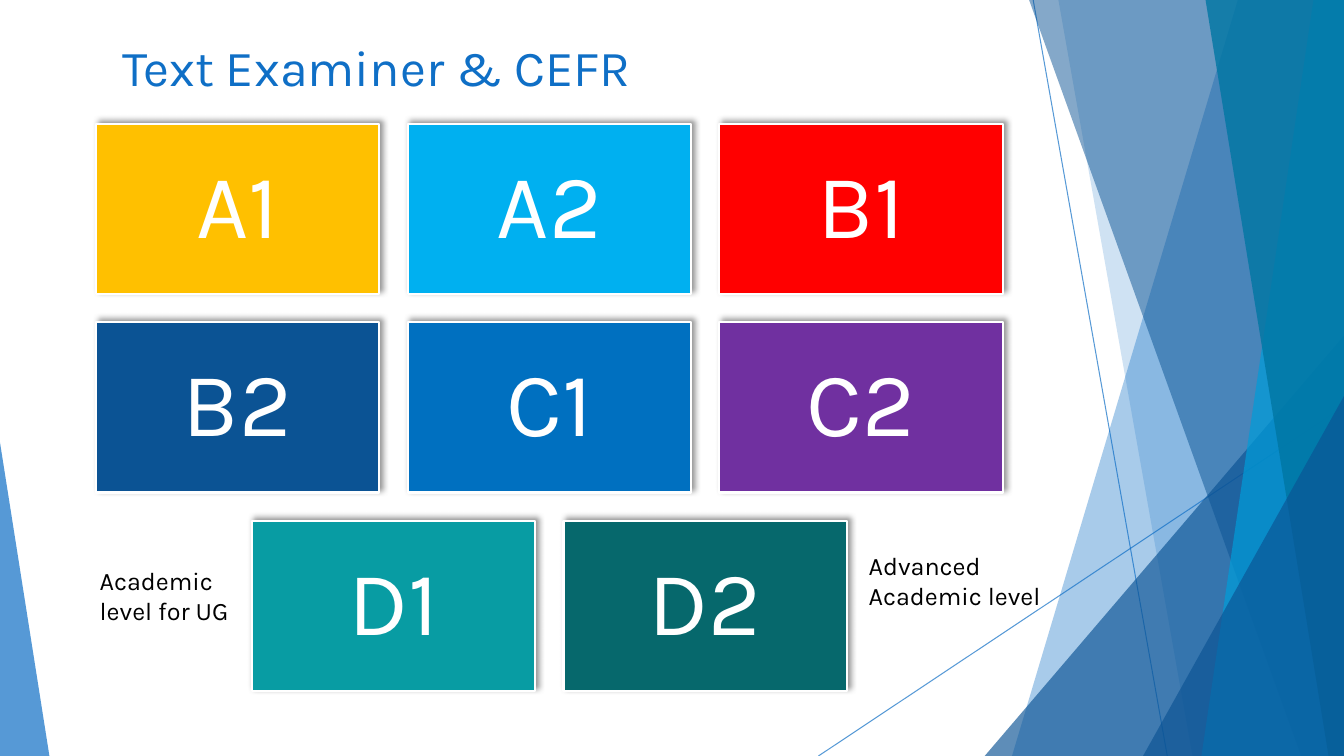
from dataclasses import dataclass

from lxml.etree import SubElement
from pptx import Presentation
from pptx.dml.color import RGBColor
from pptx.enum.shapes import MSO_CONNECTOR, MSO_SHAPE
from pptx.enum.text import MSO_ANCHOR, MSO_AUTO_SIZE, PP_ALIGN
from pptx.oxml.ns import qn
from pptx.shapes.autoshape import Shape
from pptx.slide import Slide
from pptx.text.text import TextFrame
from pptx.util import Pt


@dataclass(frozen=True)
class Theme:
    font: str = "Karla"
    blue: str = "0F6FC6"
    navy: str = "0B5394"
    sky: str = "009DD9"
    teal: str = "0076A3"
    white: str = "FFFFFF"
    black: str = "000000"
    title: float = 36
    level: float = 65
    note: float = 18


@dataclass(frozen=True)
class Ray:
    start: tuple[float, float]
    end: tuple[float, float]


@dataclass(frozen=True)
class Facet:
    top: float
    base: float
    color: str
    alpha: int


@dataclass(frozen=True)
class Wedge:
    left: float
    top: float
    width: float
    apex: float
    color: str
    alpha: int


@dataclass(frozen=True)
class Tile:
    text: str
    color: str


@dataclass(frozen=True)
class Note:
    text: str
    left: float
    top: float
    width: float


THEME = Theme()
WIDTH, HEIGHT = 960, 540
TILE_W, TILE_H, GAP = 202.5, 121.5, 20.25
GRID_LEFT, GRID_TOP, COLS = 68.4, 88.6, 3

RAYS = [Ray((738, 0), (833.8, HEIGHT)), Ray((WIDTH, 290.2), (584.6, HEIGHT))]
DECOR = [
    Facet(884.2, 722.9, THEME.blue, 36),
    Facet(756, 851.8, THEME.blue, 20),
    Wedge(703.4, 239.8, 256.6, 1, THEME.navy, 66),
    Facet(735.1, 929.5, THEME.navy, 50),
    Facet(938.2, 858.2, THEME.sky, 70),
    Facet(861.1, 949, THEME.teal, 80),
    Wedge(816.5, 283, 143.5, 1, THEME.navy, 66),
    Wedge(0, 316.1, 35.3, 0, THEME.blue, 70),
]
ROWS = [
    [Tile("A1", "FFC000"), Tile("A2", "00B0F0"), Tile("B1", "FF0000")],
    [Tile("B2", THEME.navy), Tile("C1", "0070C0"), Tile("C2", "7030A0")],
    [Tile("D1", "089CA3"), Tile("D2", "06686C")],
]
NOTES = [
    Note("Academic level for UG", 64.1, 400.3, 113.8),
    Note("Advanced Academic level", 613.4, 389.5, 143.3),
]


def rgb(color: str) -> RGBColor:
    return RGBColor.from_string(color)


def fade(node, alpha: int) -> None:
    for color in node.iter(qn("a:srgbClr")):
        SubElement(color, qn("a:alpha"), val=str(alpha * 1000))


def style(frame: TextFrame, size: float, color: str) -> None:
    for part in frame.paragraphs:
        for run in part.runs:
            run.font.name = THEME.font
            run.font.size = Pt(size)
            run.font.color.rgb = rgb(color)


def paint(shape: Shape, color: str, alpha: int) -> None:
    shape.shadow.inherit = False
    shape.fill.solid()
    shape.fill.fore_color.rgb = rgb(color)
    shape.line.fill.background()
    fade(shape.element.spPr, alpha)


def add_ray(slide: Slide, ray: Ray) -> None:
    line = slide.shapes.add_connector(
        MSO_CONNECTOR.STRAIGHT, *map(Pt, ray.start + ray.end)
    )
    line.line.color.rgb = rgb(THEME.blue)
    line.line.width = Pt(0.75)
    fade(line.element.spPr, 70)
    SubElement(line.element.spPr, qn("a:effectLst"))


def add_facet(slide: Slide, facet: Facet) -> None:
    pen = slide.shapes.build_freeform(Pt(facet.top), 0)
    ends = [(WIDTH, 0), (WIDTH, HEIGHT), (facet.base, HEIGHT)]
    pen.add_line_segments([(Pt(x), Pt(y)) for x, y in ends])
    paint(pen.convert_to_shape(), facet.color, facet.alpha)


def add_wedge(slide: Slide, wedge: Wedge) -> None:
    shape = slide.shapes.add_shape(
        MSO_SHAPE.ISOSCELES_TRIANGLE,
        Pt(wedge.left), Pt(wedge.top), Pt(wedge.width), Pt(HEIGHT - wedge.top),
    )
    shape.adjustments[0] = wedge.apex
    paint(shape, wedge.color, wedge.alpha)


def cast(shape: Shape) -> None:
    shape.shadow.inherit = False
    effects = shape.element.spPr.find(qn("a:effectLst"))
    shadow = SubElement(
        effects, qn("a:outerShdw"), blurRad=str(Pt(4)), dist=str(Pt(3)),
        dir=str(315 * 60000), algn="bl", rotWithShape="0",
    )
    SubElement(shadow, qn("a:srgbClr"), val=THEME.black)
    fade(shadow, 40)


def add_tile(slide: Slide, tile: Tile, left: float, top: float) -> None:
    shape = slide.shapes.add_shape(
        MSO_SHAPE.RECTANGLE, Pt(left), Pt(top), Pt(TILE_W), Pt(TILE_H)
    )
    shape.fill.solid()
    shape.fill.fore_color.rgb = rgb(tile.color)
    shape.line.color.rgb = rgb(THEME.white)
    shape.line.width = Pt(1.5)
    cast(shape)
    frame = shape.text_frame
    frame.text = tile.text
    frame.vertical_anchor = MSO_ANCHOR.MIDDLE
    frame.paragraphs[0].alignment = PP_ALIGN.CENTER
    frame.paragraphs[0].line_spacing = 0.9
    style(frame, THEME.level, THEME.white)


def add_note(slide: Slide, note: Note) -> None:
    box = slide.shapes.add_textbox(
        Pt(note.left), Pt(note.top), Pt(note.width), Pt(51)
    )
    box.text_frame.word_wrap = True
    box.text_frame.text = note.text
    style(box.text_frame, THEME.note, THEME.black)


def set_title(slide: Slide, text: str) -> None:
    title = slide.shapes.title
    title.left, title.top, title.width, title.height = map(Pt, (80, 22.3, 533, 51))
    frame = title.text_frame
    frame.text = text
    frame.auto_size = MSO_AUTO_SIZE.NONE
    frame.vertical_anchor = MSO_ANCHOR.TOP
    frame.paragraphs[0].alignment = PP_ALIGN.LEFT
    style(frame, THEME.title, THEME.blue)


def main() -> None:
    deck = Presentation()
    deck.slide_width, deck.slide_height = Pt(WIDTH), Pt(HEIGHT)
    slide = deck.slides.add_slide(deck.slide_layouts[5])
    set_title(slide, "Text Examiner & CEFR")
    for ray in RAYS:
        add_ray(slide, ray)
    for item in DECOR:
        if isinstance(item, Facet):
            add_facet(slide, item)
        else:
            add_wedge(slide, item)
    for row, tiles in enumerate(ROWS):
        shift = (COLS - len(tiles)) / 2
        for col, tile in enumerate(tiles):
            left = GRID_LEFT + (col + shift) * (TILE_W + GAP)
            add_tile(slide, tile, left, GRID_TOP + row * (TILE_H + GAP))
    for note in NOTES:
        add_note(slide, note)
    deck.save("out.pptx")


if __name__ == "__main__":
    main()
